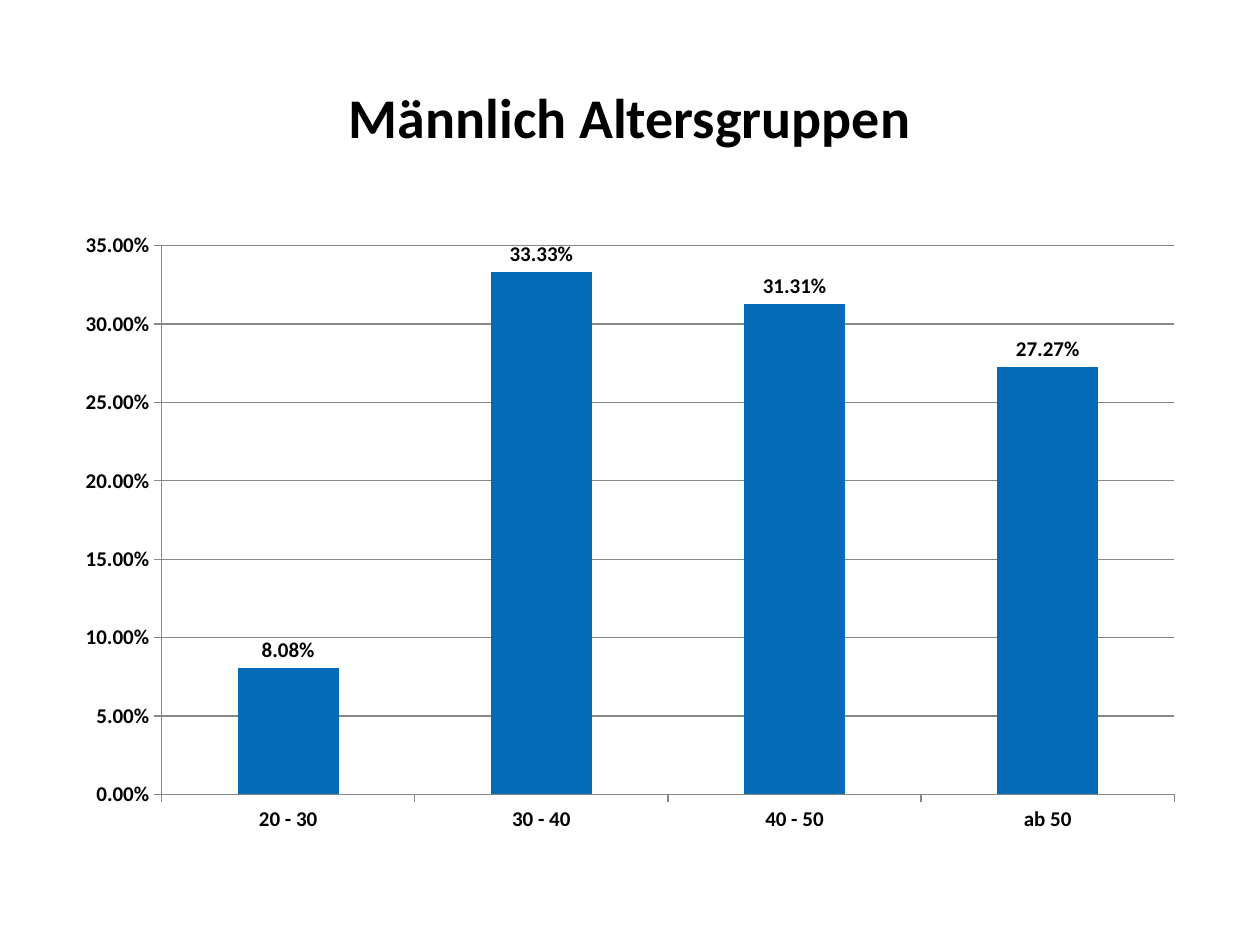
from pptx import Presentation
from pptx.chart.data import CategoryChartData
from pptx.dml.color import RGBColor
from pptx.enum.chart import XL_CHART_TYPE, XL_LABEL_POSITION, XL_TICK_MARK
from pptx.enum.text import MSO_ANCHOR, PP_ALIGN
from pptx.util import Cm, Pt

FONT = "Calibri"
COLORS = {"text": "000000", "bar": "036AB5", "line": "868686"}
PERCENT = "0.00%"
AGE_SHARES = {"20 - 30": 0.0808, "30 - 40": 0.3333, "40 - 50": 0.3131, "ab 50": 0.2727}


def style_font(font, size, bold=True):
    font.name = FONT
    font.size = Pt(size)
    font.bold = bold
    font.color.rgb = RGBColor.from_string(COLORS["text"])


def style_line(line):
    line.color.rgb = RGBColor.from_string(COLORS["line"])
    line.width = Pt(0.75)


def style_axis(axis):
    axis.major_tick_mark = XL_TICK_MARK.OUTSIDE
    axis.minor_tick_mark = XL_TICK_MARK.NONE
    style_font(axis.tick_labels.font, 12)
    style_line(axis.format.line)


def add_title(slide, text):
    title = slide.shapes.title
    title.left, title.top, title.width, title.height = Cm(1.27), Cm(0.76), Cm(22.86), Cm(3.18)
    frame = title.text_frame
    frame.text = text
    frame.vertical_anchor = MSO_ANCHOR.MIDDLE
    frame.paragraphs[0].alignment = PP_ALIGN.CENTER
    style_font(frame.paragraphs[0].runs[0].font, 32)


def add_age_chart(slide):
    data = CategoryChartData(number_format=PERCENT)
    data.categories = list(AGE_SHARES)
    data.add_series("Series 1", list(AGE_SHARES.values()))
    chart = slide.shapes.add_chart(
        XL_CHART_TYPE.COLUMN_CLUSTERED, Cm(1.27), Cm(4.45), Cm(22.86), Cm(12.57), data
    ).chart
    chart.has_legend = False
    chart.has_title = False
    style_font(chart.font, 10, bold=False)

    # Axes
    style_axis(chart.category_axis)
    shares = chart.value_axis
    style_axis(shares)
    shares.minimum_scale, shares.maximum_scale, shares.major_unit = 0, 0.35, 0.05
    shares.tick_labels.number_format = PERCENT
    shares.tick_labels.number_format_is_linked = False
    shares.has_major_gridlines = True
    style_line(shares.major_gridlines.format.line)

    # Bars and their labels
    plot = chart.plots[0]
    plot.gap_width = 150
    plot.vary_by_categories = False
    bars = plot.series[0]
    bars.format.fill.solid()
    bars.format.fill.fore_color.rgb = RGBColor.from_string(COLORS["bar"])
    labels = bars.data_labels
    labels.show_value = True
    labels.number_format = PERCENT
    labels.number_format_is_linked = False
    labels.position = XL_LABEL_POSITION.OUTSIDE_END
    style_font(labels.font, 12)


def main():
    deck = Presentation()
    deck.slide_width, deck.slide_height = Cm(25.4), Cm(19.05)
    slide = deck.slides.add_slide(deck.slide_layouts[5])
    add_title(slide, "Männlich Altersgruppen")
    add_age_chart(slide)
    deck.save("out.pptx")


if __name__ == "__main__":
    main()
